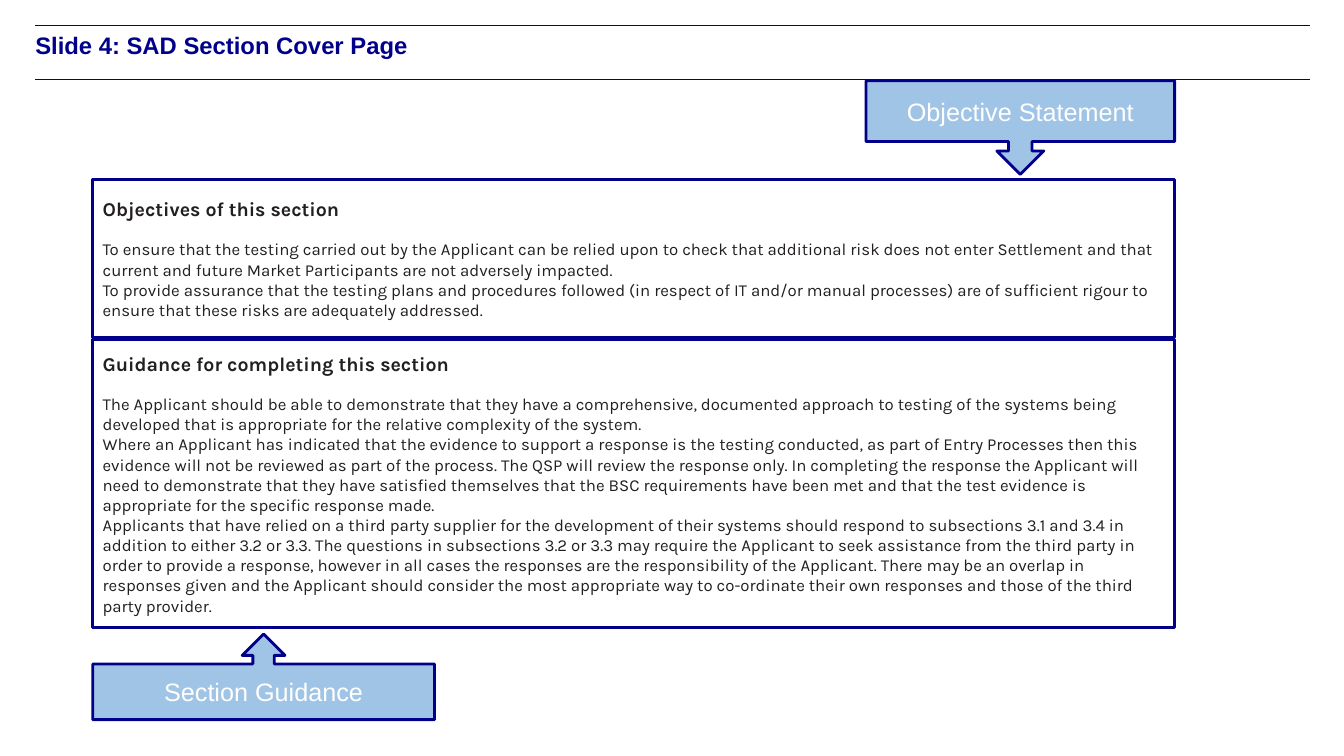
import pptx
import pptx.util
import pptx.dml.color
import pptx.enum.shapes
import pptx.enum.text
import pptx.oxml

WIDE, HIGH = pptx.util.Inches(13.33), pptx.util.Inches(7.5)
NAVY, SKY, WHITE, INK = "00008B", "A0C4E5", "FFFFFF", "231F20"
LEFT, SPAN = 6.9, 80.5
EDGE, REACH = 2.63, 94.82
KINDS = pptx.enum.shapes.MSO_SHAPE
ALIGN = pptx.enum.text.PP_ALIGN
ANCHOR = pptx.enum.text.MSO_ANCHOR

TITLE = {"name": "Arial", "size": pptx.util.Pt(17), "bold": True}
HEAD = {"name": "Karla", "size": pptx.util.Pt(14), "bold": True}
BODY = {"name": "Karla", "size": pptx.util.Pt(12), "bold": False}
LABEL = {"name": "Arial", "size": pptx.util.Pt(18), "bold": False}

GOALS = [
    "To ensure that the testing carried out by the Applicant can be relied upon to check that additional risk does not enter Settlement and that current and future Market Participants are not adversely impacted.",
    "To provide assurance that the testing plans and procedures followed (in respect of IT and/or manual processes) are of sufficient rigour to ensure that these risks are adequately addressed.",
]
GUIDE = [
    "The Applicant should be able to demonstrate that they have a comprehensive, documented approach to testing of the systems being developed that is appropriate for the relative complexity of the system.",
    "Where an Applicant has indicated that the evidence to support a response is the testing conducted, as part of Entry Processes then this evidence will not be reviewed as part of the process. The QSP will review the response only. In completing the response the Applicant will need to demonstrate that they have satisfied themselves that the BSC requirements have been met and that the test evidence is appropriate for the specific response made.",
    "Applicants that have relied on a third party supplier for the development of their systems should respond to subsections 3.1 and 3.4 in addition to either 3.2 or 3.3. The questions in subsections 3.2 or 3.3 may require the Applicant to seek assistance from the third party in order to provide a response, however in all cases the responses are the responsibility of the Applicant. There may be an overlap in responses given and the Applicant should consider the most appropriate way to co-ordinate their own responses and those of the third party provider.",
]


def place(x, y, w, h):
    """Turn percentages of the slide into left, top, width and height."""
    return [int(side * part / 100) for side, part in zip((WIDE, HIGH) * 2, (x, y, w, h))]


def assign(item, values):
    """Set each named attribute on an item."""
    for name, value in values.items():
        setattr(item, name, value)


def paint(tint, code):
    """Give a fill's or font's colour a hex value."""
    tint.rgb = pptx.dml.color.RGBColor.from_string(code)


def write(para, words, style, code, align=ALIGN.LEFT):
    """Fill one paragraph with styled text."""
    para.text = words
    para.alignment = align
    assign(para.runs[0].font, style)
    paint(para.runs[0].font.color, code)


def block(slide, kind, area, code):
    """Add an outlined shape and return its text frame."""
    shape = slide.shapes.add_shape(kind, *place(*area))
    shape.shadow.inherit = False
    shape.fill.solid()
    paint(shape.fill.fore_color, code)
    paint(shape.line.color, NAVY)
    shape.line.width = pptx.util.Pt(2)
    frame = shape.text_frame
    assign(frame, {"word_wrap": True, "vertical_anchor": ANCHOR.MIDDLE})
    return frame


def panel(slide, top, tall, head, lines):
    """Add a white box with a heading and body paragraphs."""
    frame = block(slide, KINDS.RECTANGLE, (LEFT, top, SPAN, tall), WHITE)
    write(frame.paragraphs[0], head, HEAD, INK)
    frame.paragraphs[0].space_after = pptx.util.Pt(13)
    for line in lines:
        write(frame.add_paragraph(), line, BODY, INK)


def callout(slide, kind, area, words):
    """Add a blue arrow callout with a centred label."""
    frame = block(slide, kind, area, SKY)
    write(frame.paragraphs[0], words, LABEL, WHITE, ALIGN.CENTER)


def rule(slide, level):
    """Draw a thin line across the slide."""
    x, y, w, _ = place(EDGE, level, REACH, 0)
    line = slide.shapes.add_connector(pptx.enum.shapes.MSO_CONNECTOR.STRAIGHT, x, y, x + w, y)
    paint(line.line.color, NAVY)
    line.line.width = pptx.util.Pt(0.5)
    line._element.spPr.append(pptx.oxml.parse_xml(
        '<a:effectLst xmlns:a="http://schemas.openxmlformats.org/drawingml/2006/main"/>'))


def headline(slide, words):
    """Place and style the slide's title."""
    title = slide.shapes.title
    area = place(EDGE, 4, REACH, 6.53)
    assign(title, dict(zip(("left", "top", "width", "height"), area)))
    frame = title.text_frame
    assign(frame, dict.fromkeys(("margin_left", "margin_top", "margin_right", "margin_bottom"), 0))
    assign(frame, {"vertical_anchor": ANCHOR.TOP, "word_wrap": True,
                   "auto_size": pptx.enum.text.MSO_AUTO_SIZE.NONE})
    write(frame.paragraphs[0], words, TITLE, NAVY)


def main():
    """Build and save the slide."""
    deck = pptx.Presentation()
    assign(deck, {"slide_width": WIDE, "slide_height": HIGH})
    slide = deck.slides.add_slide(deck.slide_layouts[5])
    for level in (3.33, 10.53):
        rule(slide, level)
    headline(slide, "Slide 4: SAD Section Cover Page")
    panel(slide, 23.73, 20.93, "Objectives of this section", GOALS)
    panel(slide, 44.93, 38.13, "Guidance for completing this section", GUIDE)
    wide = 22.96
    callout(slide, KINDS.DOWN_ARROW_CALLOUT, (LEFT + SPAN - wide, 10.67, wide, 12.4), "Objective Statement")
    callout(slide, KINDS.UP_ARROW_CALLOUT, (LEFT, 83.87, 25.43, 11.33), "Section Guidance")
    deck.save("out.pptx")


if __name__ == "__main__":
    main()
